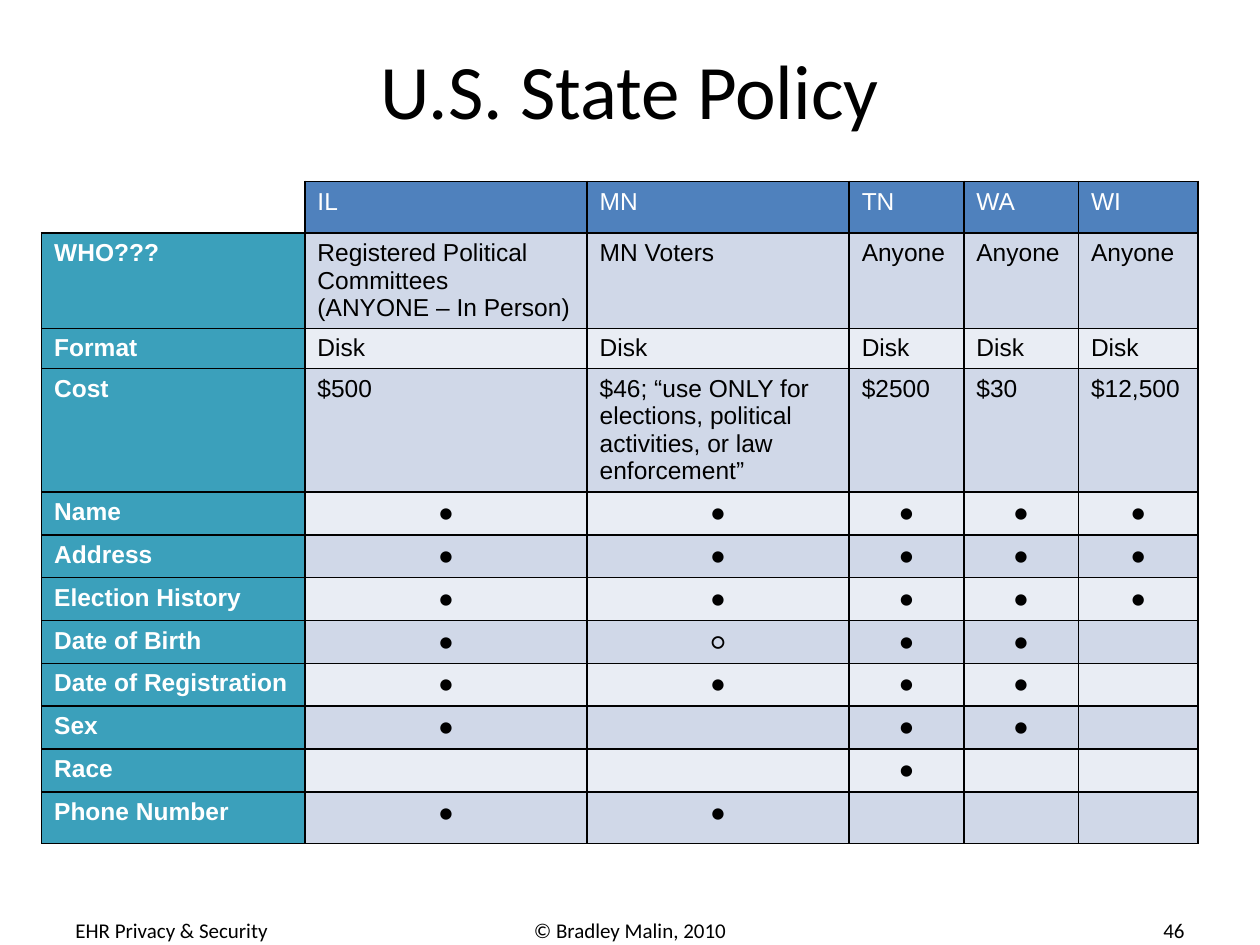
from lxml import etree
from pptx import Presentation
from pptx import util as u
from pptx.dml.color import RGBColor
from pptx.enum import text
from pptx.oxml import ns

BLACK = RGBColor(0x00, 0x00, 0x00)
WHITE = RGBColor(0xFF, 0xFF, 0xFF)
HEADER_BLUE = RGBColor(0x4F, 0x81, 0xBD)
LABEL_TEAL = RGBColor(0x3B, 0xA0, 0xBB)
BANDS = RGBColor(0xD0, 0xD8, 0xE8), RGBColor(0xE9, 0xED, 0xF4)

WIDTH, HEIGHT = u.Inches(10), u.Inches(7.5)
MARGIN = 0.05  # share of the slide's width
COLUMN_WIDTHS = [2.09, 2.24, 2.08, 0.91, 0.91, 0.95]
ROW_HEIGHTS = [0.41, 0.75, 0.32, 0.98] + [0.34] * 7 + [0.41]
PLAIN_TABLE_STYLE = "{2D5ABB26-0587-4C30-8999-92F81FD0307C}"

STATES = ["IL", "MN", "TN", "WA", "WI"]
TERMS = [
    ["WHO???", "Registered Political Committees\n(ANYONE – In Person)", "MN Voters"]
    + ["Anyone"] * 3,
    ["Format"] + ["Disk"] * 5,
    ["Cost", "$500",
     "$46; “use ONLY for elections, political activities, or law enforcement”",
     "$2500", "$30", "$12,500"],
]
# One mark per state; a dash leaves the cell empty.
FIELDS = {
    "Name": "●●●●●",
    "Address": "●●●●●",
    "Election History": "●●●●●",
    "Date of Birth": "●○●●-",
    "Date of Registration": "●●●●-",
    "Sex": "●-●●-",
    "Race": "--●--",
    "Phone Number": "●●---",
}


def write(frame, words, size=14, font="Arial", color=BLACK, bold=False,
          align=text.PP_ALIGN.LEFT):
    for index, line in enumerate(words.split("\n")):
        para = frame.paragraphs[0] if index == 0 else frame.add_paragraph()
        para.alignment = align
        if not line:
            # An empty paragraph takes its height from its end mark.
            etree.SubElement(para._p, ns.qn("a:endParaRPr"), sz=str(size * 100))
            continue
        span = para.add_run()
        span.text = line
        span.font.size = u.Pt(size)
        span.font.name = font
        span.font.bold = bold
        span.font.color.rgb = color


def add_borders(cell, sides="LRTB"):
    properties = cell._tc.get_or_add_tcPr()
    for side in sides:
        line = etree.SubElement(properties, ns.qn(f"a:ln{side}"), w=str(u.Pt(1)))
        fill = etree.SubElement(line, ns.qn("a:solidFill"))
        etree.SubElement(fill, ns.qn("a:srgbClr"), val=str(BLACK))


def fill_cell(cell, words, fill, **style):
    add_borders(cell)
    cell.fill.solid()
    cell.fill.fore_color.rgb = fill
    write(cell.text_frame, words, **style)


def add_title(page, words):
    title = page.shapes.title
    title.left, title.top = int(WIDTH * MARGIN), u.Inches(0.08)
    title.width, title.height = int(WIDTH * (1 - 2 * MARGIN)), u.Inches(1.25)
    title.text_frame.vertical_anchor = text.MSO_ANCHOR.MIDDLE
    write(title.text_frame, words, size=44, font="Calibri",
          align=text.PP_ALIGN.CENTER)


def add_policy_table(page):
    rows = TERMS + [[name, *marks.replace("-", " ")] for name, marks in FIELDS.items()]
    frame = page.shapes.add_table(
        len(ROW_HEIGHTS), len(COLUMN_WIDTHS), u.Inches(0.33), u.Inches(1.44),
        u.Inches(sum(COLUMN_WIDTHS)), u.Inches(sum(ROW_HEIGHTS)))
    table = frame.table
    table.horz_banding = table.first_row = False
    table._tbl.tblPr.find(ns.qn("a:tableStyleId")).text = PLAIN_TABLE_STYLE
    for column, width in zip(table.columns, COLUMN_WIDTHS):
        column.width = u.Inches(width)
    for row, height in zip(table.rows, ROW_HEIGHTS):
        row.height = u.Inches(height)

    corner = table.cell(0, 0)
    add_borders(corner, "RB")
    write(corner.text_frame, "")
    for column, state in enumerate(STATES, 1):
        fill_cell(table.cell(0, column), state, HEADER_BLUE, color=WHITE)
    for row, (label, *values) in enumerate(rows, 1):
        fill_cell(table.cell(row, 0), label, LABEL_TEAL, color=WHITE, bold=True)
        style = {}
        if label in FIELDS:
            style = {"font": "Calibri", "align": text.PP_ALIGN.CENTER}
        for column, value in enumerate(values, 1):
            fill_cell(table.cell(row, column), value.strip(),
                      BANDS[(row - 1) % 2], **style)


def add_footer(page, words, left, width, align):
    """Place a footer line; left and width are shares of the slide's width."""
    box = page.shapes.add_textbox(int(WIDTH * left), u.Inches(7.18),
                                  int(WIDTH * width), u.Inches(0.4))
    box.text_frame.word_wrap = True
    box.text_frame.vertical_anchor = text.MSO_ANCHOR.MIDDLE
    write(box.text_frame, words, size=12, font="Calibri", align=align)


def main():
    deck = Presentation()
    deck.slide_width, deck.slide_height = WIDTH, HEIGHT
    page = deck.slides.add_slide(deck.slide_layouts[5])
    add_title(page, "U.S. State Policy")
    add_policy_table(page)
    side = 0.23
    add_footer(page, "EHR Privacy & Security", MARGIN, side, text.PP_ALIGN.LEFT)
    add_footer(page, "© Bradley Malin, 2010", 0.34, 0.32, text.PP_ALIGN.CENTER)
    add_footer(page, "46", 1 - MARGIN - side, side, text.PP_ALIGN.RIGHT)
    deck.save("out.pptx")


if __name__ == "__main__":
    main()
